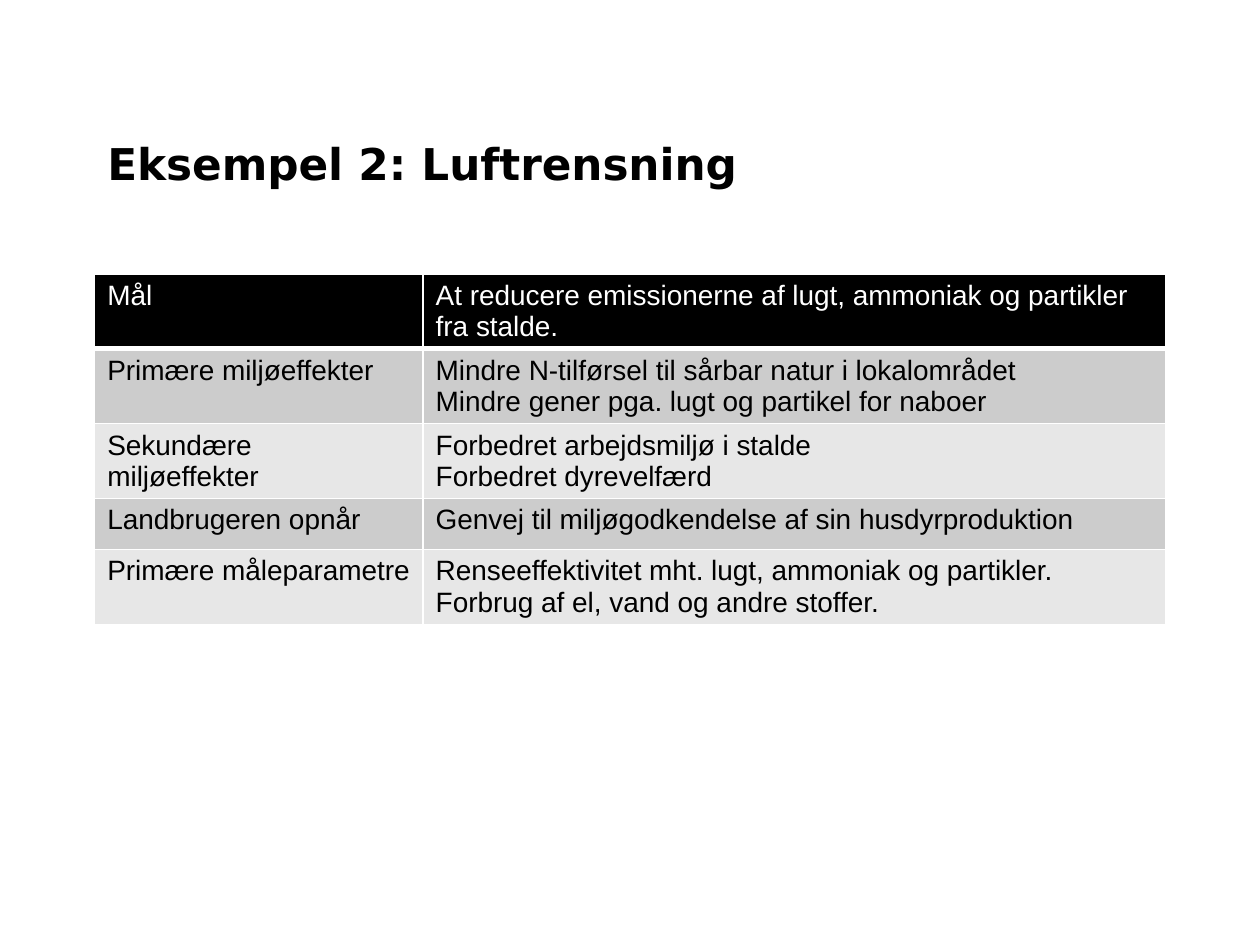
from lxml import etree
from pptx import Presentation
from pptx.dml.color import RGBColor
from pptx.enum import text
from pptx.oxml import ns
from pptx.util import Cm, Pt

COLORS = {"head": "000000", "dark": "CCCCCC", "light": "E7E7E7",
          "text": "000000", "line": "FFFFFF"}

ROWS = [
    ("Mål", "At reducere emissionerne af lugt, ammoniak og partikler fra stalde."),
    ("Primære miljøeffekter",
     "Mindre N-tilførsel til sårbar natur i lokalområdet\n"
     "Mindre gener pga. lugt og partikel for naboer"),
    ("Sekundære miljøeffekter",
     "Forbedret arbejdsmiljø i stalde\nForbedret dyrevelfærd"),
    ("Landbrugeren opnår", "Genvej til miljøgodkendelse af sin husdyrproduktion"),
    ("Primære måleparametre",
     "Renseeffektivitet mht. lugt, ammoniak og partikler.\n"
     "Forbrug af el, vand og andre stoffer."),
]


def rgb(name):
    return RGBColor.from_string(COLORS[name])


def style_font(font, name, size, color, bold=False):
    font.name, font.size, font.bold = name, Pt(size), bold
    font.color.rgb = rgb(color)


def set_borders(cell, bottom):
    """Draw white cell borders; they must precede the fill in the XML."""
    tcPr = cell._tc.get_or_add_tcPr()
    for side, width in (("L", 1), ("R", 1), ("T", 1), ("B", bottom)):
        ln = etree.SubElement(tcPr, ns.qn(f"a:ln{side}"), w=str(Pt(width)))
        fill = etree.SubElement(ln, ns.qn("a:solidFill"))
        etree.SubElement(fill, ns.qn("a:srgbClr"), val=COLORS["line"])


def add_title(s, left, top, width, height):
    sp = s.shapes.title
    sp.left, sp.top, sp.width, sp.height = left, top, width, height
    tf = sp.text_frame
    tf.text = "Eksempel 2: Luftrensning"
    tf.vertical_anchor = text.MSO_ANCHOR.MIDDLE
    p = tf.paragraphs[0]
    p.alignment = text.PP_ALIGN.LEFT
    style_font(p.runs[0].font, "DejaVu Sans", 25, "text", bold=True)


def add_effects_table(s, left, top, width, row_height):
    table = s.shapes.add_table(len(ROWS), 2, left, top, width,
                               row_height * len(ROWS)).table
    table.columns[0].width = Cm(6.62)
    table.columns[1].width = width - Cm(6.62)
    for i, row in enumerate(ROWS):
        fill = "head" if i == 0 else "dark" if i % 2 else "light"
        for j, content in enumerate(row):
            cell = table.cell(i, j)
            set_borders(cell, bottom=1 if i else 3)
            cell.fill.solid()
            cell.fill.fore_color.rgb = rgb(fill)
            cell.text_frame.text = content
            for p in cell.text_frame.paragraphs:
                style_font(p.runs[0].font, "Arial", 16,
                           "text" if i else "line")


def main():
    prs = Presentation()
    prs.slide_width, prs.slide_height = Cm(25.4), Cm(19.05)
    s = prs.slides.add_slide(prs.slide_layouts[5])
    # Title above, table below, sharing the same margins
    left, width = Cm(1.91), Cm(21.59)
    add_title(s, left, Cm(1.7), width, Cm(3.18))
    add_effects_table(s, left, Cm(5.52), width, Cm(1.03))
    prs.save("out.pptx")


if __name__ == "__main__":
    main()
